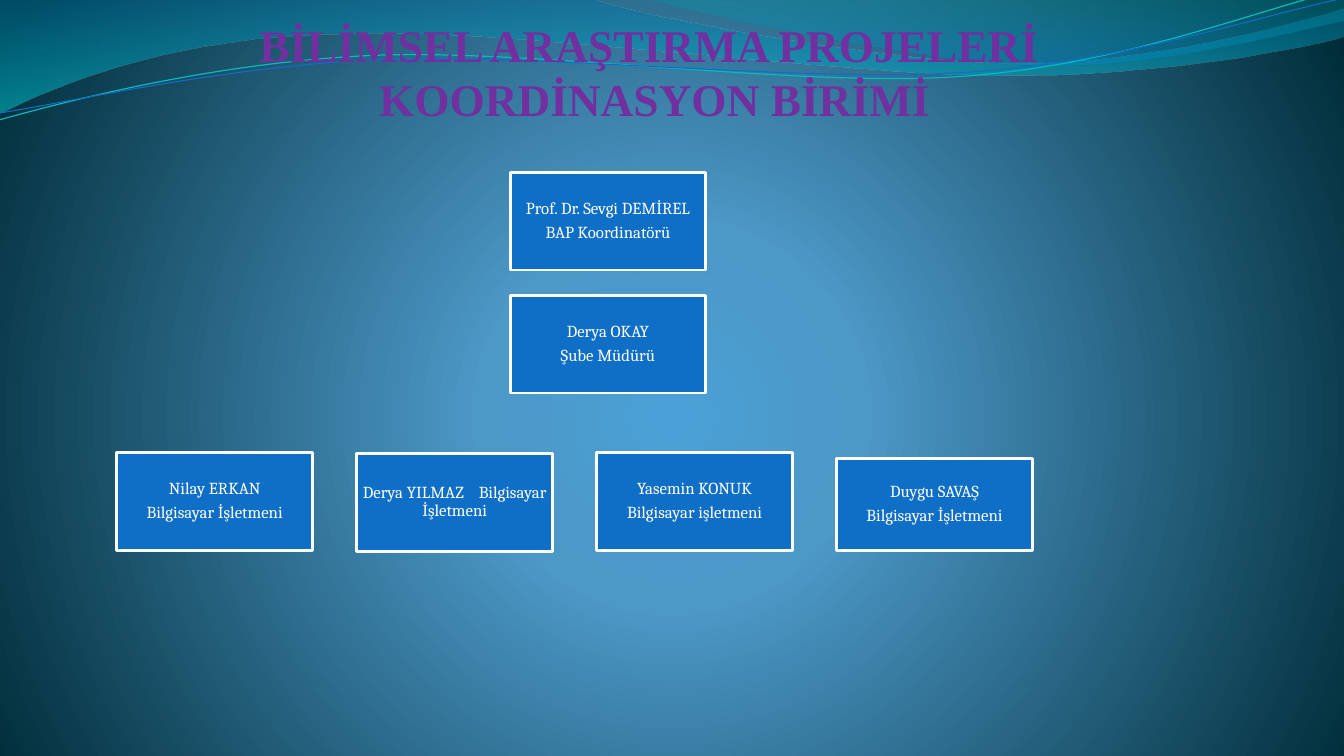
from dataclasses import dataclass

from lxml.etree import SubElement
from pptx import Presentation
from pptx.dml.color import RGBColor
from pptx.enum.shapes import MSO_SHAPE
from pptx.enum.text import MSO_ANCHOR as ANCHOR, MSO_AUTO_SIZE, PP_ALIGN as ALIGN
from pptx.oxml.ns import qn
from pptx.util import Inches, Pt


@dataclass(frozen=True)
class Theme:
    title: str = "7030A0"
    card: str = "0F6FC6"
    white: str = "FFFFFF"
    aqua: str = "0AB8BF"
    title_font: str = "Times New Roman"
    card_font: str = "Cambria"
    title_size: float = 32.4
    card_size: float = 12
    # Gradient stops: position, colour, opacity (all in percent)
    backdrop: tuple = ((0, "4AA0D6", 100), (25, "4C98C7", 100), (100, "002C38", 100))
    wide_wave: tuple = ((0, "0074A1", 45), (100, "00C6CF", 55))
    right_wave: tuple = ((0, "00A1A9", 30), (80, "008BBF", 45))


THEME = Theme()
CARD_W, CARD_H = 1.94, 0.97

# Outlines: a pair is a straight step, six numbers are a Bezier curve
WIDE_WAVE = [
    (0, 0), (5.87, -0.01),
    (6.34, 0.17, 8.85, 0.63, 10.11, 0.63),
    (11.38, 0.63, 12.78, 0.26, 13.33, 0.09),
    (13.35, 0.36),
    (13.11, 0.44, 11.6, 0.76, 9.94, 0.75),
    (8.29, 0.75, 5.09, 0.28, 3.43, 0.34),
    (1.72, 0.36, 0.61, 0.83, -0.01, 1.13),
]
RIGHT_WAVE = [
    (6.39, -0.01),
    (6.79, 0.11, 9.09, 0.62, 10.25, 0.65),
    (11.41, 0.69, 12.82, 0.32, 13.33, 0.21),
    (13.33, 0),
]
AQUA_LINE = [
    (-0.01, 1.19),
    (0.64, 1.01, 2.11, 0.62, 3.69, 0.55),
    (5.27, 0.48, 7.9, 0.87, 9.5, 0.76),
    (11.1, 0.66, 12.52, 0.08, 13.31, -0.1),
]
BLUE_LINE = [
    (0, 1.12),
    (0.63, 1.03, 2.18, 0.66, 3.78, 0.59),
    (5.37, 0.53, 7.96, 0.82, 9.55, 0.72),
    (11.15, 0.62, 12.55, 0.14, 13.34, -0.02),
]

# Cards: top, height, lines of text
MANAGERS = [
    (1.71, CARD_H, ["Prof. Dr. Sevgi DEMİREL", "BAP Koordinatörü"]),
    (2.93, CARD_H, ["Derya OKAY", "Şube Müdürü"]),
]
OPERATORS = [
    (4.49, CARD_H, ["Nilay ERKAN", "Bilgisayar İşletmeni"]),
    (4.5, CARD_H, [("Derya YILMAZ", "Bilgisayar İşletmeni")]),
    (4.49, CARD_H, ["Yasemin KONUK", "Bilgisayar işletmeni"]),
    (4.55, 0.91, ["Duygu SAVAŞ", "Bilgisayar İşletmeni"]),
]


def rgb(value):
    return RGBColor.from_string(value)


def add_text(p, text, *, font, size, color, bold=False, tracking=0):
    r = p.add_run()
    r.text = text
    r.font.name, r.font.size, r.font.bold = font, Pt(size), bold
    r.font.color.rgb = rgb(color)
    if tracking:
        r._r.get_or_add_rPr().set("spc", str(tracking * 100))


def set_gradient(fill, element, stops, angle=None, focus=None):
    """Give a linear gradient (angle) or a circular one (focus rectangle)."""
    fill.gradient()
    grad = element.find(".//" + qn("a:gradFill"))
    for child in list(grad):
        grad.remove(child)
    gs_list = SubElement(grad, qn("a:gsLst"))
    for pos, color, opacity in stops:
        gs = SubElement(gs_list, qn("a:gs"), pos=str(pos * 1000))
        clr = SubElement(gs, qn("a:srgbClr"), val=color)
        if opacity < 100:
            SubElement(clr, qn("a:alpha"), val=str(opacity * 1000))
    if focus:
        circle = SubElement(grad, qn("a:path"), attrib={"path": "circle"})
        sides = {side: str(pct * 1000) for side, pct in zip("ltrb", focus)}
        SubElement(circle, qn("a:fillToRect"), attrib=sides)
    else:
        SubElement(grad, qn("a:lin"), ang=str(angle * 60000), scaled="1")


def add_outline(slide, outline, closed):
    """Draw the points as a freeform, then join each curve's three into a Bezier."""
    points = [
        (Inches(x), Inches(y)) for step in outline for x, y in zip(step[::2], step[1::2])
    ]
    builder = slide.shapes.build_freeform(*points[0])
    builder.add_line_segments(points[1:], close=closed)
    sp = builder.convert_to_shape()
    sp.shadow.inherit = False
    legs = iter(sp._element.findall(".//" + qn("a:lnTo")))
    for step in outline[1:]:
        leg = next(legs)
        if len(step) == 6:
            curve = leg.makeelement(qn("a:cubicBezTo"))
            leg.addprevious(curve)
            for part in (leg, next(legs), next(legs)):
                curve.append(part[0])
                part.getparent().remove(part)
    return sp


def add_wave(slide, outline, stops):
    sp = add_outline(slide, outline, closed=True)
    set_gradient(sp.fill, sp._element, stops, angle=90)
    sp.line.fill.background()


def add_wave_line(slide, outline, color, width):
    sp = add_outline(slide, outline, closed=False)
    sp.fill.background()
    sp.line.color.rgb = rgb(color)
    sp.line.width = Pt(width)


def set_frame(tf, inset):
    tf.word_wrap = True
    tf.auto_size = MSO_AUTO_SIZE.NONE
    tf.vertical_anchor = ANCHOR.MIDDLE
    tf.margin_left = tf.margin_right = tf.margin_top = tf.margin_bottom = Inches(inset)


def place_title(slide, text):
    sp = slide.shapes.title
    sp.left, sp.top, sp.width, sp.height = map(Inches, (0.77, 0.18, 11.33, 1.06))
    slide.shapes._spTree.append(sp._element)  # in front of the waves
    set_frame(sp.text_frame, 0)
    p = sp.text_frame.paragraphs[0]
    p.alignment = ALIGN.CENTER
    for i, line in enumerate(text):
        if i:
            p.add_line_break()
        add_text(p, line, font=THEME.title_font, size=THEME.title_size,
                 color=THEME.title, bold=True)


def add_card(slide, left, top, height, lines):
    sp = slide.shapes.add_shape(MSO_SHAPE.RECTANGLE, *map(Inches, (left, top, CARD_W, height)))
    sp.shadow.inherit = False
    sp.fill.solid()
    sp.fill.fore_color.rgb = rgb(THEME.card)
    sp.line.color.rgb = rgb(THEME.white)
    sp.line.width = Pt(2)
    tf = sp.text_frame
    set_frame(tf, 0.03)
    style = dict(font=THEME.card_font, size=THEME.card_size, color=THEME.white)
    for i, line in enumerate(lines):
        p = tf.add_paragraph() if i else tf.paragraphs[0]
        p.alignment, p.line_spacing, p.space_after = ALIGN.CENTER, 0.9, Pt(4.2)
        if isinstance(line, tuple):  # name and post on one line, with a wide gap
            name, line = line
            add_text(p, name, **style)
            add_text(p, " ", tracking=8, **style)
        add_text(p, line, **style)


def main():
    prs = Presentation()
    prs.slide_width, prs.slide_height = Inches(13.33), Inches(7.5)
    slide = prs.slides.add_slide(prs.slide_layouts[5])

    # Backdrop and waves
    set_gradient(slide.background.fill, slide._element, THEME.backdrop,
                 focus=(10, 110, 10, 100))
    add_wave(slide, WIDE_WAVE, THEME.wide_wave)
    add_wave(slide, RIGHT_WAVE, THEME.right_wave)
    add_wave_line(slide, AQUA_LINE, THEME.aqua, 0.85)
    add_wave_line(slide, BLUE_LINE, THEME.card, 0.75)

    # Title
    place_title(slide, ["BİLİMSEL ARAŞTIRMA PROJELERİ", " KOORDİNASYON BİRİMİ"])

    # Organisation chart
    for card in MANAGERS:
        add_card(slide, 5.06, *card)
    for i, card in enumerate(OPERATORS):
        add_card(slide, 1.16 + 2.38 * i, *card)

    prs.save("out.pptx")


if __name__ == "__main__":
    main()
